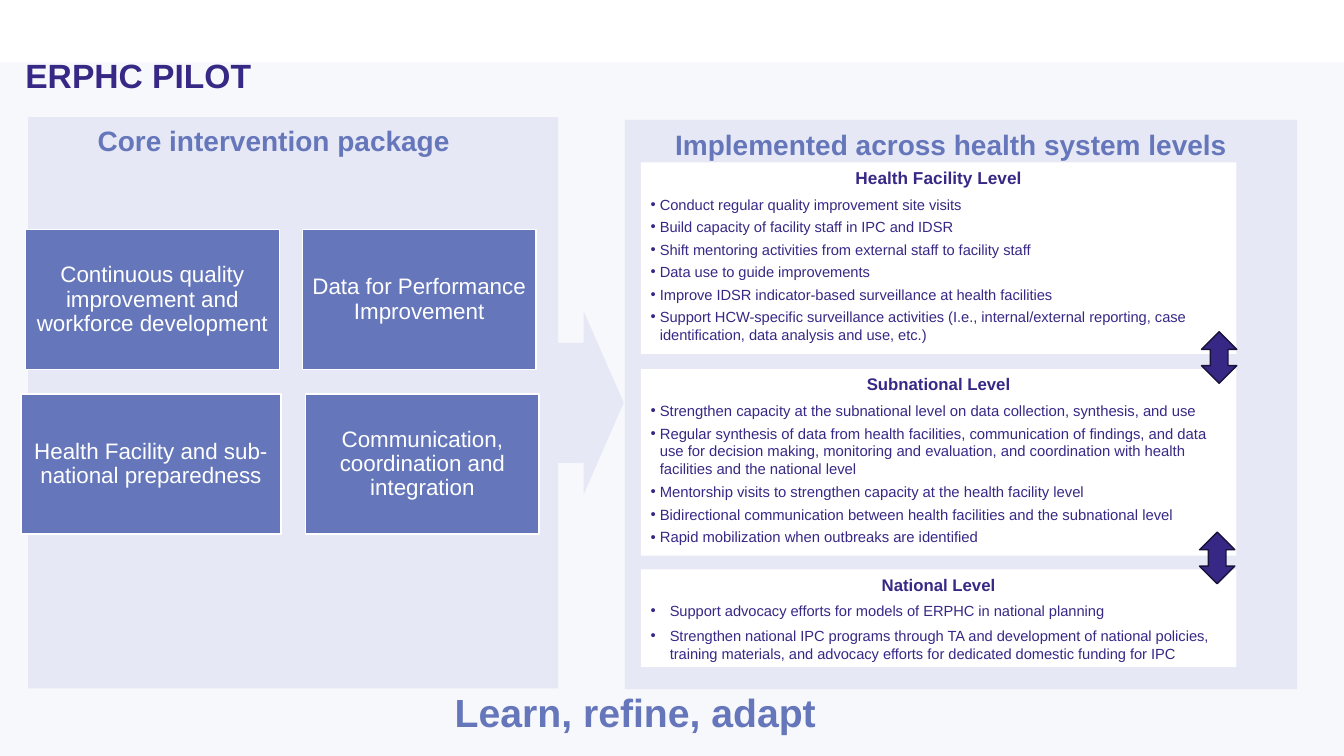
from lxml.etree import SubElement
from pptx import Presentation
from pptx.dml.color import RGBColor
from pptx.enum.shapes import MSO_SHAPE
from pptx.enum.text import MSO_ANCHOR, PP_ALIGN
from pptx.oxml.ns import qn
from pptx.util import Cm, Pt

WHITE = RGBColor(0xFF, 0xFF, 0xFF)
PALE = RGBColor(0xE6, 0xE8, 0xF5)
BLUE = RGBColor(0x65, 0x77, 0xBA)
INDIGO = RGBColor(0x38, 0x28, 0x86)
NAVY = RGBColor(0x19, 0x12, 0x3B)

LEVEL_LEFT, LEVEL_WIDTH = 16.15, 15.01
LEVELS = [
    ("Health Facility Level", 4.09, 4.83, 12.3, 10.5, 3.5, 0.23, [
        "Conduct regular quality improvement site visits",
        "Build capacity of facility staff in IPC and IDSR",
        "Shift mentoring activities from external staff to facility staff",
        "Data use to guide improvements",
        "Improve IDSR indicator-based surveillance at health facilities",
        "Support HCW-specific surveillance activities (I.e., internal/external reporting, "
        "case identification, data analysis and use, etc.)",
    ]),
    ("Subnational Level", 9.3, 4.7, 12, 10.6, 3.5, 0.23, [
        "Strengthen capacity at the subnational level on data collection, synthesis, and use",
        "Regular synthesis of data from health facilities, communication of findings, and data "
        "use for decision making, monitoring and evaluation, and coordination with health "
        "facilities and the national level",
        "Mentorship visits to strengthen capacity at the health facility level",
        "Bidirectional communication between health facilities and the subnational level",
        "Rapid mobilization when outbreaks are identified",
    ]),
    ("National Level", 14.35, 2.46, 12, 10.5, 5.3, 0.48, [
        "Support advocacy efforts for models of ERPHC in national planning",
        "Strengthen national IPC programs through TA and development of national policies, "
        "training materials, and advocacy efforts for dedicated domestic funding for IPC",
    ]),
]
PILLARS = [
    ("Continuous quality improvement and workforce development", 0.64, 5.79, 6.4),
    ("Data for Performance Improvement", 7.62, 5.79, 5.89),
    ("Health Facility and sub-national preparedness", 0.53, 9.93, 6.55),
    ("Communication, coordination and integration", 7.7, 9.93, 5.89),
]
HEADINGS = [
    ("ERPHC PILOT", (0.64, 1.5, 29.21, 2.39), 24, INDIGO, PP_ALIGN.LEFT, 0.9, 0),
    ("Learn, refine, adapt", (3.87, 17.35, 24.28, 1.6), 28, BLUE, PP_ALIGN.CENTER, 1.0, 0),
    ("Core intervention package", (1.07, 3.1, 11.66, 1.24), 20, BLUE, PP_ALIGN.CENTER, 1.0, 0),
    ("Implemented across health system levels", (15.04, 3.02, 17.86, 1.35), 20, BLUE,
     PP_ALIGN.CENTER, 1.07, 0.13),
]


def set_all(target, values):
    for name, value in values.items():
        setattr(target, name, value)


def add_box(s, kind, box, fill, line=None):
    sp = s.shapes.add_shape(kind, *map(Cm, box))
    sp.shadow.inherit = False
    sp.fill.solid()
    sp.fill.fore_color.rgb = fill
    if line is None:
        sp.line.fill.background()
    else:
        sp.line.color.rgb = line
        sp.line.width = Pt(1)
    return sp


def write(p, text, size, color, bold=False, **layout):
    set_all(p, layout)
    r = p.add_run()
    r.text = text
    set_all(r.font, {"name": "Arial", "size": Pt(size), "bold": bold})
    r.font.color.rgb = color


def add_bullet(p, indent):
    pPr = p._p.get_or_add_pPr()
    pPr.set("marL", str(Cm(indent)))
    pPr.set("indent", str(-Cm(indent)))
    SubElement(pPr, qn("a:buFont")).set("typeface", "Arial")
    SubElement(pPr, qn("a:buChar")).set("char", "•")


def add_heading(s, text, box, size, color, align, spacing, top):
    tf = s.shapes.add_textbox(*map(Cm, box)).text_frame
    set_all(tf, {"word_wrap": True, "margin_left": 0, "margin_right": 0, "margin_top": Cm(top)})
    write(tf.paragraphs[0], text, size, color, True, alignment=align, line_spacing=spacing)


def add_level(s, title, top, height, title_size, size, gap, indent, items):
    box = (LEVEL_LEFT, top, LEVEL_WIDTH, height)
    tf = add_box(s, MSO_SHAPE.RECTANGLE, box, WHITE).text_frame
    set_all(tf, {"word_wrap": True, "vertical_anchor": MSO_ANCHOR.TOP})
    write(tf.paragraphs[0], title, title_size, INDIGO, True,
          alignment=PP_ALIGN.CENTER, space_after=Pt(5.3))
    for item in items:
        p = tf.add_paragraph()
        add_bullet(p, indent)
        write(p, item, size, INDIGO, alignment=PP_ALIGN.LEFT, space_after=Pt(gap))


def add_pillar(s, text, left, top, width):
    tf = add_box(s, MSO_SHAPE.RECTANGLE, (left, top, width, 3.53), BLUE, WHITE).text_frame
    set_all(tf, {"word_wrap": True, "vertical_anchor": MSO_ANCHOR.MIDDLE})
    set_all(tf, {f"margin_{side}": Cm(0.17) for side in ("left", "top", "right", "bottom")})
    write(tf.paragraphs[0], text, 16, WHITE, alignment=PP_ALIGN.CENTER, line_spacing=0.9)


def add_panels(s):
    backdrop = add_box(s, MSO_SHAPE.RECTANGLE, (0, 1.57, 33.87, 17.48), PALE)
    color = backdrop._element.spPr.find(qn("a:solidFill")).find(qn("a:srgbClr"))
    SubElement(color, qn("a:alpha")).set("val", "30000")
    add_box(s, MSO_SHAPE.RECTANGLE, (15.75, 3.02, 16.94, 14.35), PALE)
    callout = add_box(s, MSO_SHAPE.RIGHT_ARROW_CALLOUT, (0.71, 2.95, 15.01, 14.4), PALE)
    for i, value in enumerate((0.21, 0.16, 0.07, 0.89)):
        callout.adjustments[i] = value


def main():
    prs = Presentation()
    set_all(prs, {"slide_width": Cm(33.87), "slide_height": Cm(19.05)})
    s = prs.slides.add_slide(prs.slide_layouts[6])
    add_panels(s)
    for level in LEVELS:
        add_level(s, *level)
    for heading in HEADINGS:
        add_heading(s, *heading)
    for left, top in ((30.28, 8.36), (30.23, 13.41)):
        add_box(s, MSO_SHAPE.UP_DOWN_ARROW, (left, top, 0.89, 1.3), INDIGO, NAVY)
    for pillar in PILLARS:
        add_pillar(s, *pillar)
    prs.save("out.pptx")


if __name__ == "__main__":
    main()
